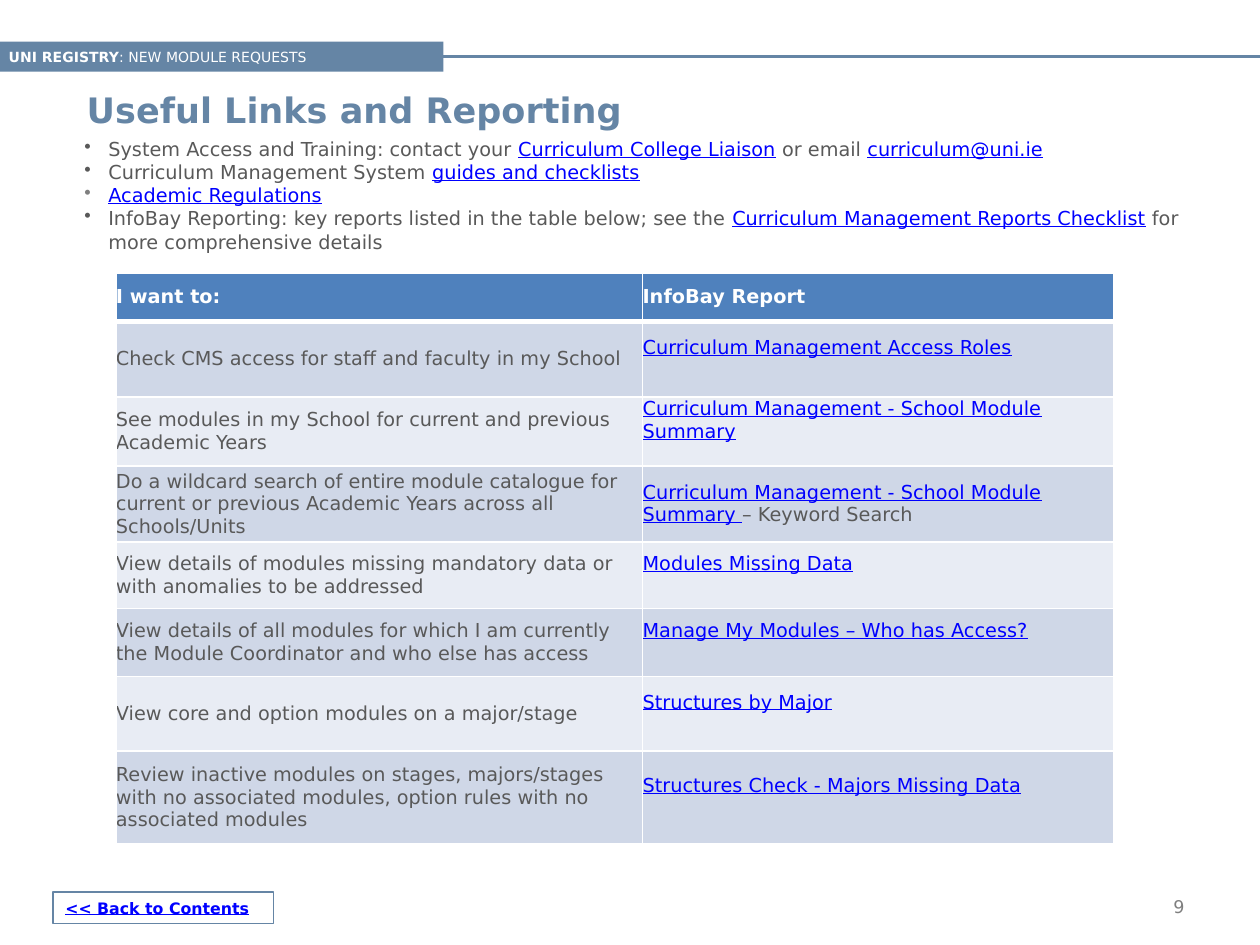
"""Build the Useful Links and Reporting slide."""
from pptx import Presentation
from pptx.dml.color import RGBColor
from pptx.enum.shapes import MSO_CONNECTOR, MSO_SHAPE
from pptx.enum.text import MSO_ANCHOR as Anchor, PP_ALIGN as Align
from pptx.oxml.ns import qn
from pptx.util import Inches, Pt
from lxml.etree import SubElement

FONT = "DejaVu Sans"
SLATE = RGBColor(0x65, 0x85, 0xA5)
WHITE = RGBColor(0xFF, 0xFF, 0xFF)
DARK = RGBColor(0x59, 0x59, 0x59)
GREY = RGBColor(0x7F, 0x7F, 0x7F)
BLUE = RGBColor(0x00, 0x00, 0xFF)
HEAD = RGBColor(0x4F, 0x81, 0xBD)
BANDS = RGBColor(0xCF, 0xD7, 0xE7), RGBColor(0xE8, 0xEC, 0xF4)
LINK = {"color": BLUE, "underline": True}
LINE_GAP = 0.18

BULLETS = [
    (DARK, [("System Access and Training: contact your ", {}),
            ("Curriculum College Liaison", LINK), (" or email ", {}),
            ("curriculum@uni.ie", LINK)]),
    (DARK, [("Curriculum Management System ", {}),
            ("guides and checklists", LINK)]),
    (GREY, [("Academic Regulations", LINK)]),
    (DARK, [("InfoBay Reporting: key reports listed in the table below; see the ", {}),
            ("Curriculum Management Reports Checklist", LINK),
            (" for more comprehensive details", {})]),
]
COL_WIDTHS = 4.18, 3.74
HEADER_HEIGHT = 0.38
HEADINGS = "I want to:", "InfoBay Report"
REPORTS = [
    (0.6, "Check CMS access for staff and faculty in my School",
     "Curriculum Management Access Roles", ""),
    (0.55, "See modules in my School for current and previous Academic Years",
     "Curriculum Management - School Module Summary", ""),
    (0.6, "Do a wildcard search of entire module catalogue for current or "
     "previous Academic Years across all Schools/Units",
     "Curriculum Management - School Module Summary ", "– Keyword Search"),
    (0.53, "View details of modules missing mandatory data or with anomalies "
     "to be addressed", "Modules Missing Data", ""),
    (0.54, "View details of all modules for which I am currently the Module "
     "Coordinator and who else has access",
     "Manage My Modules – Who has Access?", ""),
    (0.59, "View core and option modules on a major/stage",
     "Structures by Major", ""),
    (0.74, "Review inactive modules on stages, majors/stages with no associated "
     "modules, option rules with no associated modules",
     "Structures Check - Majors Missing Data", ""),
]


def add_run(p, text, size=11, color=DARK, bold=False, underline=False):
    """Add one formatted run to a paragraph."""
    r = p.add_run()
    r.text = text
    r.font.name, r.font.size = FONT, Pt(size)
    r.font.bold, r.font.underline = bold, underline
    r.font.color.rgb = color


def add_box(s, box, runs, fill=None, line=None, align=Align.LEFT):
    """Add a rectangle with one line of text."""
    sp = s.shapes.add_shape(MSO_SHAPE.RECTANGLE, *map(Inches, box))
    sp.shadow.inherit = False
    if fill is None:
        sp.fill.background()
    else:
        sp.fill.solid()
        sp.fill.fore_color.rgb = fill
    if line is None:
        sp.line.fill.background()
    else:
        sp.line.color.rgb, sp.line.width = line, Pt(0.75)
    return fill_frame(sp, runs, align)


def add_label(s, box, runs, align=Align.LEFT):
    """Add a text box with one line of text."""
    return fill_frame(s.shapes.add_textbox(*map(Inches, box)), runs, align)


def fill_frame(sp, runs, align):
    """Write runs into the vertically centred frame of a shape."""
    tf = sp.text_frame
    tf.word_wrap, tf.vertical_anchor = True, Anchor.MIDDLE
    p = tf.paragraphs[0]
    p.alignment = align
    for text, style in runs:
        add_run(p, text, **style)
    return sp


def add_rule(s, banner):
    """Draw the rule from the banner to the right edge."""
    y = banner.top + banner.height // 2
    rule = s.shapes.add_connector(MSO_CONNECTOR.STRAIGHT,
                                  banner.left + banner.width, y, Inches(10.04), y)
    rule.begin_connect(banner, 3)
    rule.line.color.rgb, rule.line.width = SLATE, Pt(2)
    SubElement(rule._element.spPr, qn("a:effectLst"))


def add_bullets(s, box, items):
    """Add the bulleted list."""
    tf = s.shapes.add_textbox(*map(Inches, box)).text_frame
    tf.word_wrap = True
    tf.margin_left = tf.margin_top = tf.margin_right = tf.margin_bottom = 0
    for i, (color, runs) in enumerate(items):
        p = tf.add_paragraph() if i else tf.paragraphs[0]
        pPr = p._p.get_or_add_pPr()
        pPr.set("marL", str(Inches(0.19)))
        pPr.set("indent", str(-Inches(0.19)))
        SubElement(SubElement(pPr, qn("a:buClr")), qn("a:srgbClr"), val=str(color))
        SubElement(pPr, qn("a:buChar"), char="•")
        for text, style in runs:
            add_run(p, text, **style)


def set_cell(cell, runs, fill, bottom_width=1, bottom_margin=0):
    """Fill a table cell with runs, colour and white borders."""
    cell.vertical_anchor = Anchor.MIDDLE
    cell.margin_left = cell.margin_top = cell.margin_right = 0
    cell.margin_bottom = Inches(bottom_margin)
    for text, style in runs:
        add_run(cell.text_frame.paragraphs[0], text, **style)
    tcPr = cell._tc.get_or_add_tcPr()
    for side, width in ("L", 1), ("R", 1), ("T", 1), ("B", bottom_width):
        ln = SubElement(tcPr, qn(f"a:ln{side}"), w=str(Pt(width)))
        SubElement(SubElement(ln, qn("a:solidFill")), qn("a:srgbClr"), val=str(WHITE))
    cell.fill.solid()
    cell.fill.fore_color.rgb = fill


def add_report_table(s, left, top):
    """Add the table of tasks and reports."""
    heights = [HEADER_HEIGHT] + [row[0] for row in REPORTS]
    size = Inches(sum(COL_WIDTHS)), Inches(sum(heights))
    table = s.shapes.add_table(len(heights), len(COL_WIDTHS),
                               Inches(left), Inches(top), *size).table
    for col, width in zip(table.columns, COL_WIDTHS):
        col.width = Inches(width)
    for row, height in zip(table.rows, heights):
        row.height = Inches(height)
    for c, heading in enumerate(HEADINGS):
        set_cell(table.cell(0, c), [(heading, {"color": WHITE, "bold": True})],
                 HEAD, bottom_width=3)
    for i, (_, task, report, note) in enumerate(REPORTS):
        fill = BANDS[i % 2]
        runs = [(report, LINK)] + ([(note, {})] if note else [])
        set_cell(table.cell(i + 1, 0), [(task, {})], fill)
        set_cell(table.cell(i + 1, 1), runs, fill,
                 bottom_margin=0 if note else LINE_GAP)


def main():
    """Build and save the slide."""
    prs = Presentation()
    prs.slide_width, prs.slide_height = Inches(10), Inches(7.5)
    s = prs.slides.add_slide(prs.slide_layouts[6])
    banner_style = {"size": 8, "color": WHITE}
    banner = add_box(s, (-0.03, 0.33, 3.55, 0.24),
                     [("UNI REGISTRY", {**banner_style, "bold": True}),
                      (": NEW MODULE REQUESTS", banner_style)], fill=SLATE)
    add_rule(s, banner)
    add_label(s, (0.59, 0.65, 8.9, 0.44),
              [("Useful Links and Reporting",
                {"size": 20, "color": SLATE, "bold": True})])
    add_label(s, (8.83, 7.06, 0.67, 0.27),
              [("9", {"size": 10, "color": GREY})], align=Align.RIGHT)
    add_box(s, (0.42, 7.08, 1.75, 0.25),
            [("<< Back to Contents", {**LINK, "size": 9, "bold": True})], line=SLATE)
    add_bullets(s, (0.67, 1.09, 8.96, 1.67), BULLETS)
    add_report_table(s, 0.92, 2.17)
    prs.save("out.pptx")


if __name__ == "__main__":
    main()
